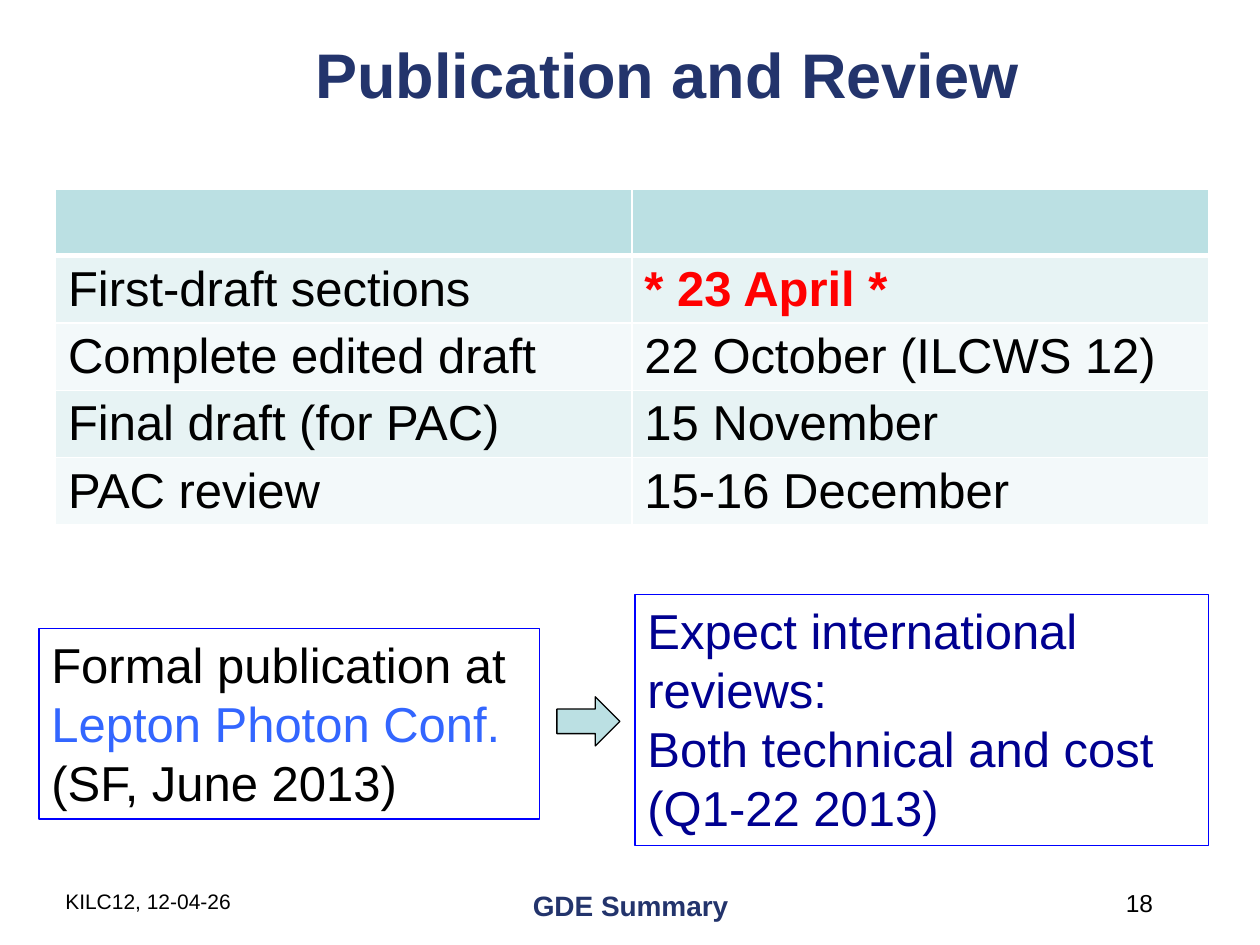
from dataclasses import dataclass

from lxml.etree import SubElement
from pptx import Presentation
from pptx.dml.color import RGBColor
from pptx.enum.shapes import MSO_SHAPE
from pptx.enum.text import MSO_ANCHOR, MSO_AUTO_SIZE, PP_ALIGN
from pptx.oxml.ns import qn
from pptx.util import Inches, Pt

NAVY, PALE = "23346C", "BBE0E3"
BANDS = ("E7F3F4", "F3F9FA")


@dataclass
class Run:
    """A stretch of text in one colour."""
    text: str
    color: str = "000000"
    bold: bool = False


@dataclass
class Box:
    """A framed text box; each paragraph is a list of runs."""
    at: tuple[float, float, float, float]
    paragraphs: list[list[Run]]


@dataclass
class Footer:
    """A footer field."""
    text: str
    at: tuple[float, float, float, float]
    size: float
    align: PP_ALIGN
    color: str = "000000"
    bold: bool = False


MILESTONES = [
    (Run("First-draft sections"), Run("* 23 April *", "FF0000", True)),
    (Run("Complete edited draft"), Run("22 October (ILCWS 12)")),
    (Run("Final draft (for PAC)"), Run("15 November")),
    (Run("PAC review"), Run("15-16 December")),
]
REVIEW = ("Expect international reviews:", "Both technical and cost", "(Q1-22 2013)")
BOXES = [
    Box((0.31, 4.99, 3.97, 1.51), [[Run("Formal publication at "),
                                    Run("Lepton Photon Conf.\n", "3366FF"),
                                    Run("(SF, June 2013)")]]),
    Box((5.04, 4.72, 4.55, 1.99), [[Run(text, "000090")] for text in REVIEW]),
]
FOOTERS = [
    Footer("KILC12, 12-04-26", (0.42, 7, 2.67, 0.5), 12, PP_ALIGN.LEFT),
    Footer("GDE Summary", (3.42, 7, 3.17, 0.5), 16, PP_ALIGN.CENTER, NAVY, True),
    Footer("18", (7.17, 7, 2.08, 0.5), 14, PP_ALIGN.RIGHT),
]


def rgb(value: str) -> RGBColor:
    """Turn a hex string into a colour."""
    return RGBColor.from_string(value)


def write(p, text: str, size: float = 28, color: str = "000000",
          bold: bool = False, align: PP_ALIGN = PP_ALIGN.LEFT) -> None:
    """Add formatted text to a paragraph, breaking the line after a newline."""
    p.alignment = align
    r = p.add_run()
    r.text = text.rstrip("\n")
    r.font.name, r.font.size, r.font.bold = "Arial", Pt(size), bold
    r.font.color.rgb = rgb(color)
    if text.endswith("\n"):
        p.add_line_break()


def add_shape(s, kind: MSO_SHAPE, at: tuple, line: str, fill: str | None = None):
    """Add a thinly outlined shape without a shadow."""
    sp = s.shapes.add_shape(kind, *map(Inches, at))
    sp.shadow.inherit = False
    sp.line.color.rgb, sp.line.width = rgb(line), Pt(0.75)
    if fill:
        sp.fill.solid()
        sp.fill.fore_color.rgb = rgb(fill)
    else:
        sp.fill.background()
    return sp


def add_box(s, box: Box) -> None:
    """Draw a framed text box."""
    tf = add_shape(s, MSO_SHAPE.RECTANGLE, box.at, "0000FF").text_frame
    tf.word_wrap, tf.vertical_anchor = True, MSO_ANCHOR.TOP
    tf.auto_size = MSO_AUTO_SIZE.SHAPE_TO_FIT_TEXT
    for i, runs in enumerate(box.paragraphs):
        p = tf.add_paragraph() if i else tf.paragraphs[0]
        for run in runs:
            write(p, run.text, color=run.color, bold=run.bold)


def add_footer(s, footer: Footer) -> None:
    """Draw a footer field."""
    tf = s.shapes.add_textbox(*map(Inches, footer.at)).text_frame
    tf.word_wrap = True
    write(tf.paragraphs[0], footer.text, footer.size, footer.color,
          footer.bold, footer.align)


def style_cell(cell, fill: str, top: float = 1, bottom: float = 1) -> None:
    """Give a cell white borders and a fill."""
    tc_pr = cell._tc.get_or_add_tcPr()
    for side, width in (("L", 1), ("R", 1), ("T", top), ("B", bottom)):
        ln = SubElement(tc_pr, qn(f"a:ln{side}"), w=str(Pt(width)))
        SubElement(SubElement(ln, qn("a:solidFill")), qn("a:srgbClr"), val="FFFFFF")
    cell.fill.solid()
    cell.fill.fore_color.rgb = rgb(fill)


def add_milestones(s) -> None:
    """Draw the schedule table under an empty header row."""
    rows = len(MILESTONES) + 1
    table = s.shapes.add_table(rows, 2, Inches(0.44), Inches(1.5),
                               Inches(9.15), Inches(0.53 * rows)).table
    for cell in table.rows[0].cells:
        style_cell(cell, PALE, bottom=3)
    for i, runs in enumerate(MILESTONES):
        for cell, run in zip(table.rows[i + 1].cells, runs):
            style_cell(cell, BANDS[i % 2], top=1 if i else 3)
            write(cell.text_frame.paragraphs[0], run.text,
                  color=run.color, bold=run.bold)


def main() -> None:
    """Build the slide."""
    prs = Presentation()
    prs.slide_width, prs.slide_height = Inches(10), Inches(7.5)
    s = prs.slides.add_slide(prs.slide_layouts[5])
    title = s.shapes.title
    title.left, title.top = Inches(1.42), Inches(0.08)
    title.width, title.height = Inches(7.75), Inches(1)
    title.text_frame.vertical_anchor = MSO_ANCHOR.MIDDLE
    write(title.text_frame.paragraphs[0], "Publication and Review", 36, NAVY,
          True, PP_ALIGN.CENTER)
    add_milestones(s)
    for box in BOXES:
        add_box(s, box)
    add_shape(s, MSO_SHAPE.RIGHT_ARROW, (4.42, 5.53, 0.5, 0.39), "000000", PALE)
    for footer in FOOTERS:
        add_footer(s, footer)
    prs.save("out.pptx")


if __name__ == "__main__":
    main()
